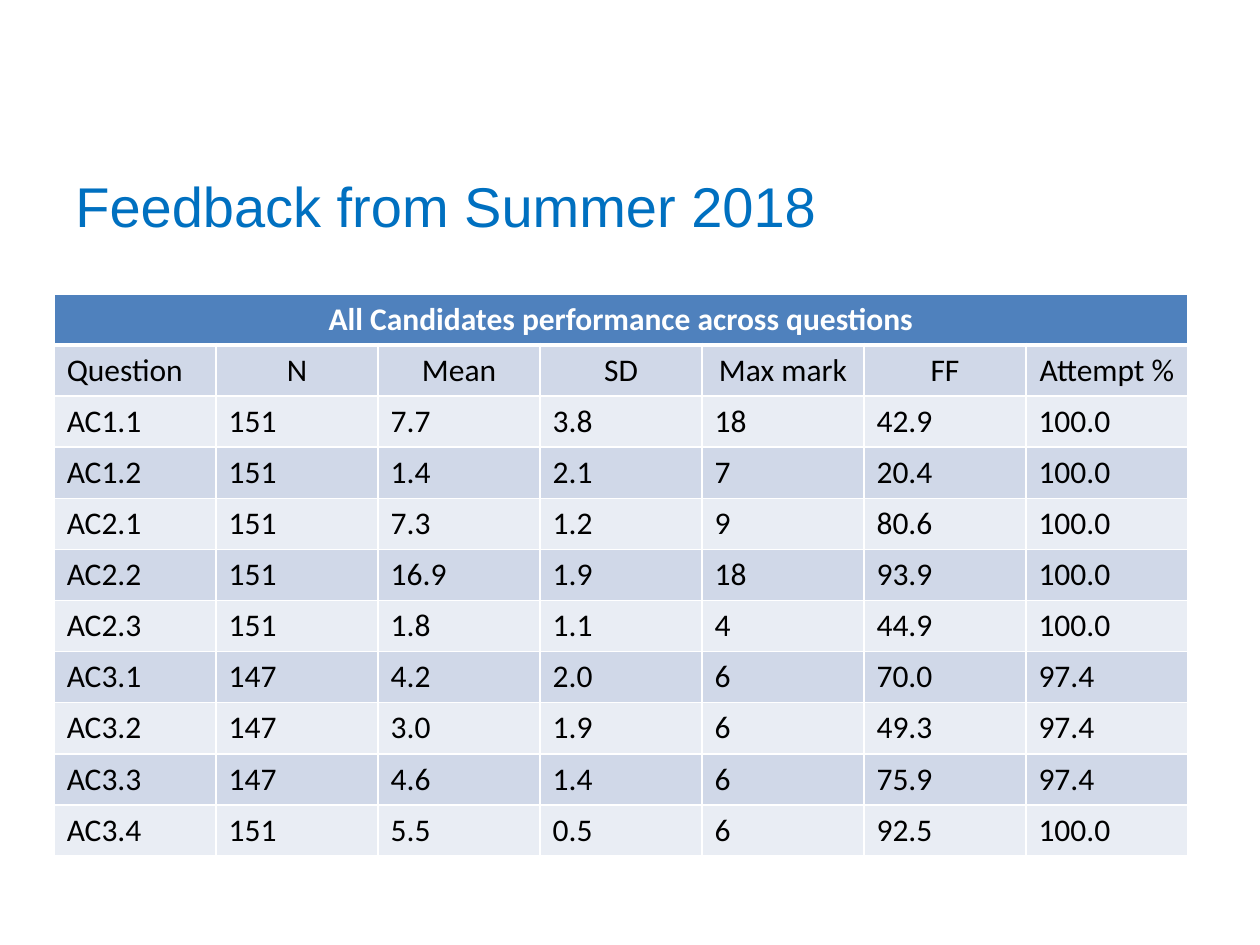
from dataclasses import dataclass

from lxml.etree import SubElement as Sub
from pptx import Presentation
from pptx.dml.color import RGBColor as Rgb
from pptx.enum.text import PP_ALIGN as Align
from pptx.oxml.ns import qn
from pptx.util import Inches, Pt


@dataclass(frozen=True)
class Theme:
    title: str = "0070C0"
    head: str = "4F81BD"
    bands: tuple = ("E9EDF4", "D0D8E8")
    light: str = "FFFFFF"
    dark: str = "000000"
    title_font: str = "Arial"
    body_font: str = "Calibri"
    title_size: int = 32
    body_size: int = 18
    rule: int = 1
    head_rule: int = 3


THEME = Theme()
WIDE, HIGH = Inches(10), Inches(7.5)

TITLE = "Feedback from Summer 2018"
HEAD = "All Candidates performance across questions"
LABELS = ("Question", "N", "Mean", "SD", "Max mark", "FF", "Attempt %")
SCORES = (
    ("AC1.1", "151", "7.7", "3.8", "18", "42.9", "100.0"),
    ("AC1.2", "151", "1.4", "2.1", "7", "20.4", "100.0"),
    ("AC2.1", "151", "7.3", "1.2", "9", "80.6", "100.0"),
    ("AC2.2", "151", "16.9", "1.9", "18", "93.9", "100.0"),
    ("AC2.3", "151", "1.8", "1.1", "4", "44.9", "100.0"),
    ("AC3.1", "147", "4.2", "2.0", "6", "70.0", "97.4"),
    ("AC3.2", "147", "3.0", "1.9", "6", "49.3", "97.4"),
    ("AC3.3", "147", "4.6", "1.4", "6", "75.9", "97.4"),
    ("AC3.4", "151", "5.5", "0.5", "6", "92.5", "100.0"),
)


def share(x, y, w, h):
    """Turn shares of the slide's size into lengths."""
    return [round(part * full)
            for part, full in zip((x, y, w, h), (WIDE, HIGH) * 2)]


def write(frame, text, color, align=Align.LEFT, **form):
    para = frame.paragraphs[0]
    para.alignment = align
    run = para.add_run()
    run.text = text
    for key, value in form.items():
        setattr(run.font, key, value)
    run.font.color.rgb = Rgb.from_string(color)


def add_title(slide):
    frame = slide.shapes.add_textbox(*share(0.05, 0.175, 0.92, 0.17)).text_frame
    frame.word_wrap = True
    write(frame, TITLE, THEME.title,
          name=THEME.title_font, size=Pt(THEME.title_size))


def paint(cell, fill, base):
    """Give a cell its borders, with its own lower one, and then its fill."""
    props = cell._tc.get_or_add_tcPr()
    widths = {"L": THEME.rule, "R": THEME.rule, "T": THEME.rule, "B": base}
    for side, width in widths.items():
        line = Sub(props, qn(f"a:ln{side}"), w=str(Pt(width)))
        Sub(Sub(line, qn("a:solidFill")), qn("a:srgbClr"), val=THEME.light)
    cell.fill.solid()
    cell.fill.fore_color.rgb = Rgb.from_string(fill)


def add_grid(slide):
    rows = ((HEAD,) + ("",) * (len(LABELS) - 1), LABELS, *SCORES)
    box = share(0.043, 0.311, 0.9, 0.595)
    grid = slide.shapes.add_table(len(rows), len(LABELS), *box).table
    grid.cell(0, 0).merge(grid.cell(0, len(LABELS) - 1))
    for r, row in enumerate(rows):
        top = r == 0
        fill = THEME.head if top else THEME.bands[r % 2]
        base = THEME.head_rule if top else THEME.rule
        for c, text in enumerate(row):
            cell = grid.cell(r, c)
            paint(cell, fill, base)
            if text:
                mid = top or (r == 1 and c > 0)
                write(cell.text_frame, text,
                      THEME.light if top else THEME.dark,
                      Align.CENTER if mid else Align.LEFT,
                      name=THEME.body_font, size=Pt(THEME.body_size), bold=top)


def main():
    deck = Presentation()
    deck.slide_width, deck.slide_height = WIDE, HIGH
    slide = deck.slides.add_slide(deck.slide_layouts[6])
    add_title(slide)
    add_grid(slide)
    deck.save("out.pptx")


if __name__ == "__main__":
    main()
